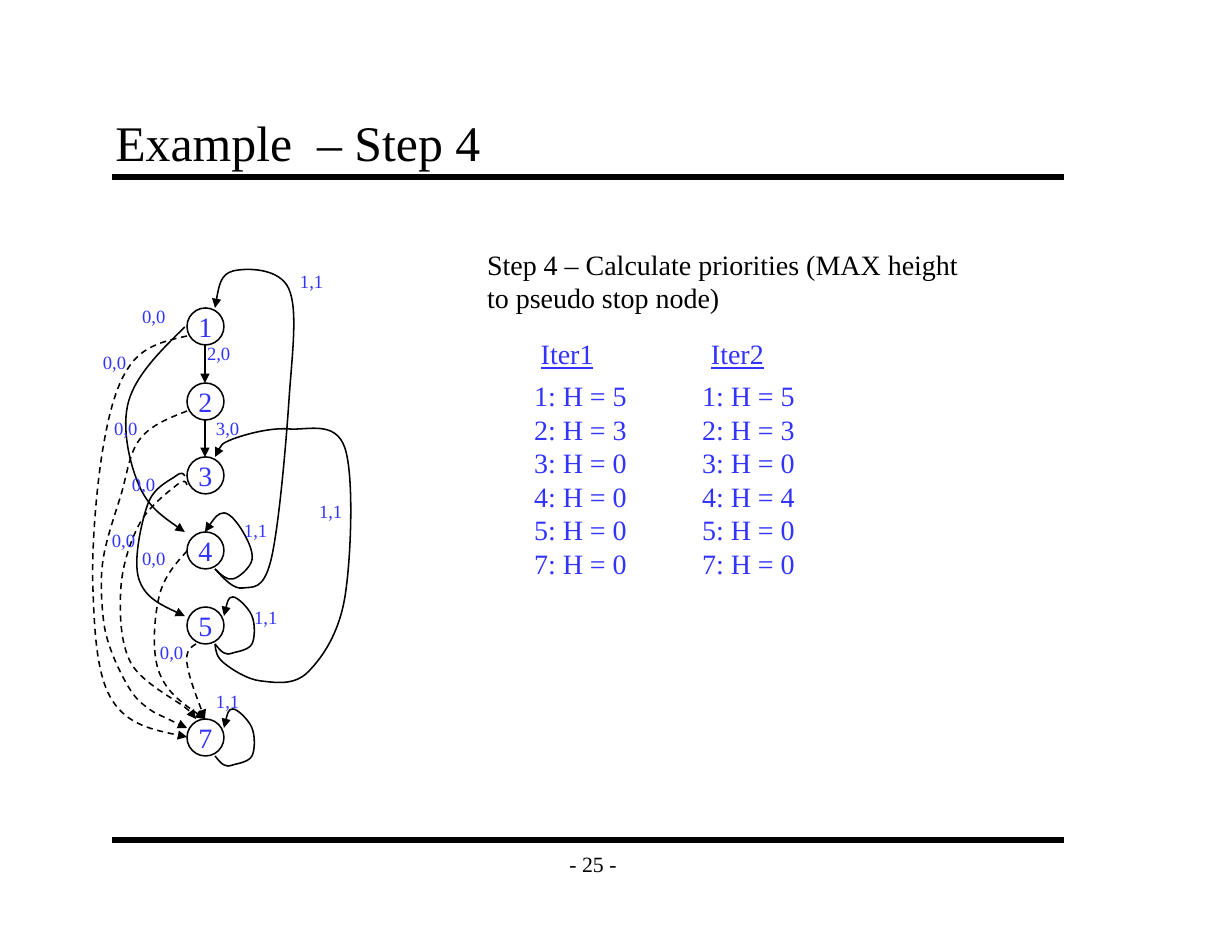
"""Build a slide showing a dependence graph and its scheduling priorities."""
from pptx import Presentation
from pptx import util as u
from pptx.dml.color import RGBColor
from pptx.enum import dml, shapes, text
from pptx.oxml.ns import qn
from pptx.oxml.xmlchemy import OxmlElement

BLACK = RGBColor(0, 0, 0)
BLUE = RGBColor(0x33, 0x33, 0xFF)
FONT = "Times New Roman"

TITLE = "Example  – Step 4"
PAGE_NUMBER = "- 25 -"
EXPLANATION = ["Step 4 – Calculate priorities (MAX height", "to pseudo stop node)"]
OPERATIONS = [1, 2, 3, 4, 5, 7]
ITERATIONS = [
    ("Iter1", 4.73, 4.67, [5, 3, 0, 0, 0, 0]),
    ("Iter2", 6.25, 6.17, [5, 3, 0, 4, 0, 0]),
]

NODE_SIZE = 0.33
NODE_LEFT = 1.67
NODE_CENTER = 1.83
NODE_TOPS = {1: 2.75, 2: 3.42, 3: 4.08, 4: 4.75, 5: 5.42, 7: 6.42}
STRAIGHT_EDGES = [(1, 2), (2, 3)]

SELF_LOOP = [(1.92, 0.33), (2, 0.41), (2.08, 0.41), (2.25, 0.33),
             (2.25, 0.08), (2.08, -0.09), (2, 0.08)]
SOLID_EDGES = [
    [(1.92, 5.08), (2.17, 5.25), (2.42, 5), (2.58, 3.58), (2.58, 2.58),
     (2.08, 2.42), (1.92, 2.75)],
    [(1.92, 5.08), (2.08, 5.17), (2.25, 5), (2.17, 4.75), (2, 4.58), (1.83, 4.75)],
    [(1.92, 5.75), (2, 5.92), (2.33, 6.08), (2.75, 6), (3.08, 5.33), (3.08, 4),
     (2.58, 3.83), (2.08, 3.92), (1.92, 4.08)],
    [(1.65, 2.92), (1.15, 3.58), (1.24, 4.33), (1.65, 4.75)],
    [(1.65, 4.25), (1.57, 4.25), (1.32, 4.5), (1.24, 5.17), (1.65, 5.5)],
] + [[(x, NODE_TOPS[node] + y) for x, y in SELF_LOOP] for node in (5, 7)]
DASHED_EDGES = [
    [(1.67, 3), (1.17, 3.25), (0.92, 4), (0.83, 5.25), (1, 6.25), (1.67, 6.58)],
    [(1.67, 3.67), (1.25, 3.92), (1.08, 4.42), (0.92, 5), (0.92, 5.5), (1, 5.83),
     (1.17, 6.17), (1.33, 6.33), (1.5, 6.42), (1.67, 6.5)],
    [(1.67, 4.33), (1.58, 4.33), (1.25, 4.67), (1.08, 5.25), (1.17, 5.92),
     (1.67, 6.33), (1.75, 6.42)],
    [(1.67, 4.92), (1.42, 5.33), (1.42, 6), (1.83, 6.42)],
    [(1.75, 5.75), (1.67, 5.92), (1.83, 6.42)],
]
EDGE_LABELS = {
    "0,0": [(1.17, 2.67), (0.82, 3.08), (0.92, 3.67), (1.08, 4.17), (0.9, 4.67),
            (1.17, 4.83), (1.33, 5.67)],
    "1,1": [(2.58, 2.36), (2.75, 4.41), (2.08, 4.58), (2.17, 5.36), (1.83, 6.11)],
    "2,0": [(1.75, 3)],
    "3,0": [(1.83, 3.67)],
}


def write(shape, lines, size, color, align=None, underline=None):
    frame = shape.text_frame
    frame.text = "\n".join(lines)
    for paragraph in frame.paragraphs:
        paragraph.alignment = align
        for run in paragraph.runs:
            run.font.name = FONT
            run.font.size = u.Pt(size)
            run.font.color.rgb = color
            run.font.underline = underline


def add_text(slide, box, lines, size, color, **options):
    shape = slide.shapes.add_textbox(*map(u.Inches, box))
    shape.text_frame.word_wrap = False
    write(shape, lines, size, color, **options)
    return shape


def style_line(shape, width, arrow=False, dashed=False):
    shape.line.color.rgb = BLACK
    shape.line.width = u.Pt(width)
    if dashed:
        shape.line.dash_style = dml.MSO_LINE.DASH
    if arrow:
        tail = OxmlElement("a:tailEnd")
        tail.set("type", "triangle")
        shape.line._get_or_add_ln().append(tail)


def add_straight(slide, start, end, width, arrow=False):
    connector = slide.shapes.add_connector(
        shapes.MSO_CONNECTOR.STRAIGHT, *map(u.Inches, start + end))
    style_line(connector, width, arrow)
    connector._element.spPr.append(OxmlElement("a:effectLst"))


def midpoint(a, b):
    return (a[0] + b[0]) / 2, (a[1] + b[1]) / 2


def bezier_points(knots):
    """Return control and end points of a smooth curve through the knots."""
    slopes = [((c[0] - a[0]) / 6, (c[1] - a[1]) / 6)
              for a, c in zip(knots, knots[2:])]
    before = [(x - dx, y - dy) for (x, y), (dx, dy) in zip(knots[1:], slopes)]
    after = [(x + dx, y + dy) for (x, y), (dx, dy) in zip(knots[1:], slopes)]
    leaving = [midpoint(knots[0], before[0])] + after
    arriving = before + [midpoint(knots[-1], after[-1])]
    return [point for segment in zip(leaving, arriving, knots[1:]) for point in segment]


def add_curve(slide, knots, dashed):
    start, *points = [(u.Inches(x), u.Inches(y))
                      for x, y in [knots[0]] + bezier_points(knots)]
    builder = slide.shapes.build_freeform(*start)
    builder.add_line_segments(points, close=False)
    shape = builder.convert_to_shape()
    segments = list(shape._element.iter(qn("a:lnTo")))
    for first, second, third in zip(segments[::3], segments[1::3], segments[2::3]):
        curve = OxmlElement("a:cubicBezTo")
        first.addprevious(curve)
        for segment in (first, second, third):
            curve.append(segment[0])
            segment.getparent().remove(segment)
    shape.fill.background()
    style_line(shape, 1, arrow=True, dashed=dashed)
    shape.shadow.inherit = False


def add_node(slide, node, top):
    shape = slide.shapes.add_shape(
        shapes.MSO_SHAPE.OVAL, *map(u.Inches, (NODE_LEFT, top, NODE_SIZE, NODE_SIZE)))
    shape.fill.background()
    style_line(shape, 1)
    shape.shadow.inherit = False
    shape.text_frame.word_wrap = False
    shape.text_frame.vertical_anchor = text.MSO_ANCHOR.MIDDLE
    write(shape, [str(node)], 18, BLUE, align=text.PP_ALIGN.CENTER)


def set_frame(shape, anchor):
    frame = shape.text_frame
    frame.margin_left = frame.margin_right = u.Inches(0.11)
    frame.margin_top = frame.margin_bottom = u.Inches(0.06)
    frame.vertical_anchor = anchor


def main():
    presentation = Presentation()
    presentation.slide_width = u.Inches(11)
    presentation.slide_height = u.Inches(8.5)
    slide = presentation.slides.add_slide(presentation.slide_layouts[5])

    for y in (1.58, 7.5):
        add_straight(slide, (1, y), (9.5, y), 4)
    number = add_text(slide, (4.92, 7.5, 0.75, 0.42), [PAGE_NUMBER], 14, BLACK,
                      align=text.PP_ALIGN.CENTER)
    set_frame(number, text.MSO_ANCHOR.MIDDLE)

    title = slide.shapes.title
    title.left, title.top, title.width, title.height = map(
        u.Inches, (0.92, 0.92, 8.5, 0.67))
    write(title, [TITLE], 32, BLACK, align=text.PP_ALIGN.LEFT)
    set_frame(title, text.MSO_ANCHOR.BOTTOM)
    title.text_frame.auto_size = text.MSO_AUTO_SIZE.NONE

    for node, top in NODE_TOPS.items():
        add_node(slide, node, top)
    for source, target in STRAIGHT_EDGES:
        add_straight(slide, (NODE_CENTER, NODE_TOPS[source] + NODE_SIZE),
                     (NODE_CENTER, NODE_TOPS[target]), 1, arrow=True)
    for edges, dashed in ((SOLID_EDGES, False), (DASHED_EDGES, True)):
        for knots in edges:
            add_curve(slide, knots, dashed)
    for label, places in EDGE_LABELS.items():
        for left, top in places:
            add_text(slide, (left, top, 0.41, 0.3), [label], 12, BLUE)

    add_text(slide, (4.25, 2.16, 4.41, 0.7), EXPLANATION, 18, BLACK)
    for heading, heading_left, left, heights in ITERATIONS:
        add_text(slide, (heading_left, 2.96, 0.67, 0.4), [heading], 18, BLUE,
                 underline=True)
        rows = [f"{node}: H = {height}" for node, height in zip(OPERATIONS, heights)]
        add_text(slide, (left, 3.33, 1.03, 1.9), rows, 18, BLUE)

    presentation.save("out.pptx")


if __name__ == "__main__":
    main()
